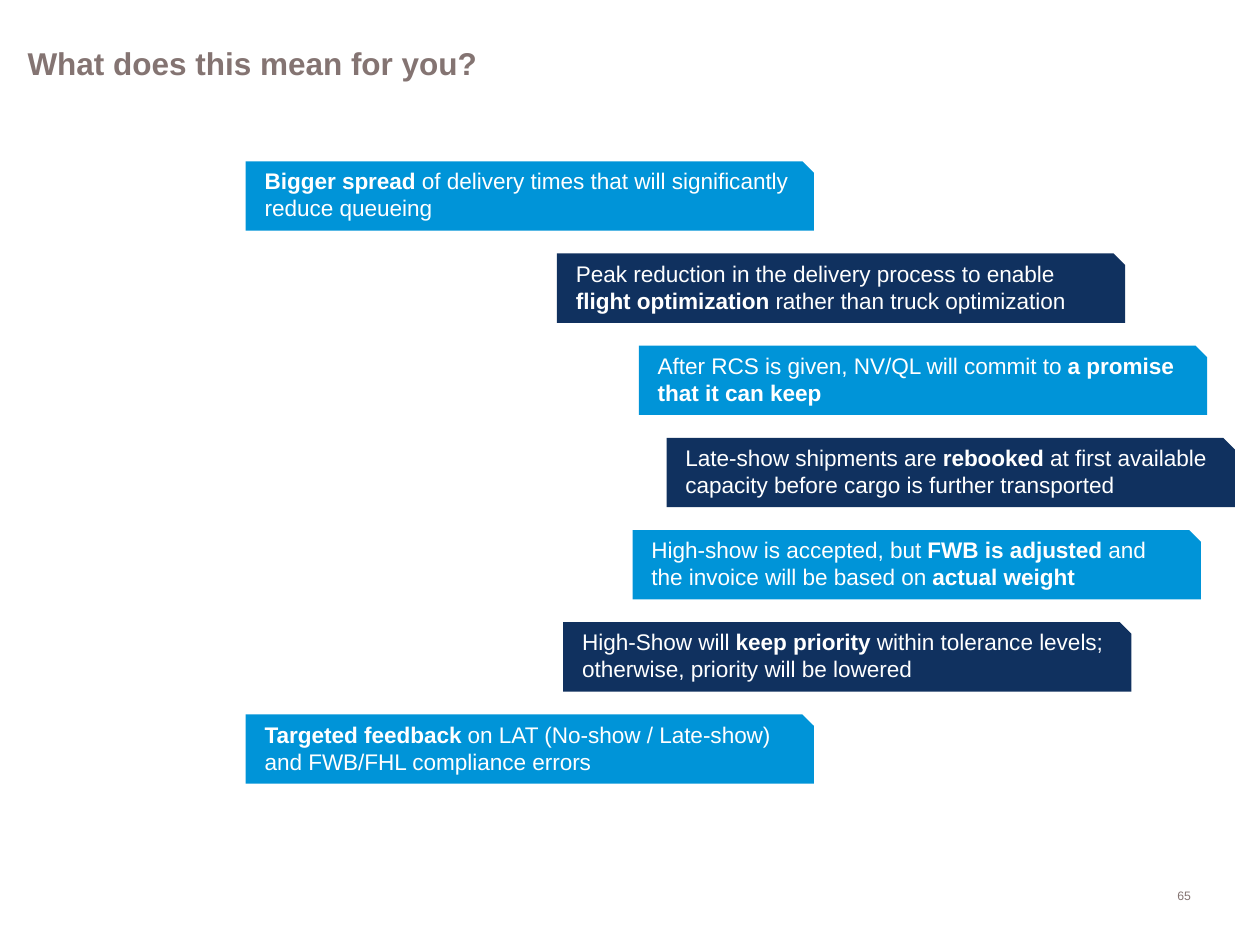
import pptx
import pptx.util
import pptx.dml.color
import pptx.enum.shapes
import pptx.enum.text

COLORS = {"sky": "0094D8", "navy": "10315F", "taupe": "847472", "white": "FFFFFF"}
ALIGN = pptx.enum.text.PP_ALIGN
ANCHOR = pptx.enum.text.MSO_ANCHOR
SIZE = (10, 7.5)
BANNER = (4.51, 0.55)
BANNERS = [
    (0, "*Bigger spread *of delivery times that will significantly reduce queueing"),
    (2.47, "Peak reduction in the delivery process to enable *flight optimization *rather than truck optimization"),
    (3.12, "After RCS is given, NV/QL will commit to *a promise that it can keep"),
    (3.34, "Late-show shipments are *rebooked *at first available capacity before cargo is further transported"),
    (3.07, "High-show is accepted, but *FWB is adjusted* and the invoice will be based on *actual weight"),
    (2.52, "High-Show will *keep priority *within tolerance levels; otherwise, priority will be lowered"),
    (0, "*Targeted feedback *on LAT (No-show / Late-show) and FWB/FHL compliance errors"),
]


def inches(*values):
    return [pptx.util.Inches(v) for v in values]


def rgb(name):
    return pptx.dml.color.RGBColor.from_string(COLORS[name])


def write(sp, text, size, color, frame, para, bold=False):
    tf = sp.text_frame
    for name, value in frame.items():
        setattr(tf, name, value)
    p = tf.paragraphs[0]
    for name, value in para.items():
        setattr(p, name, value)
    for i, part in enumerate(text.split("*")):
        if part:
            r = p.add_run()
            r.text = part
            font = {"name": "Arial", "size": pptx.util.Pt(size), "bold": bold or i % 2 == 1}
            for name, value in font.items():
                setattr(r.font, name, value)
            r.font.color.rgb = rgb(color)


def add_title(s, box):
    sp = s.shapes.add_textbox(*inches(*box))
    write(sp, "What does this mean for you?", 18, "taupe",
          {"word_wrap": True, "vertical_anchor": ANCHOR.MIDDLE},
          {"line_spacing": 0.9}, bold=True)


def add_page_number(s, box):
    sp = s.shapes.add_textbox(*inches(*box))
    write(sp, "65", 7, "taupe", {"word_wrap": True}, {"alignment": ALIGN.RIGHT})


def add_banner(s, box, text, fill):
    sp = s.shapes.add_shape(pptx.enum.shapes.MSO_SHAPE.SNIP_1_RECTANGLE, *inches(*box))
    sp.shadow.inherit = False
    sp.fill.solid()
    sp.fill.fore_color.rgb = rgb(fill)
    sp.line.fill.background()
    left, top, right, bottom = inches(0.15, 0, 0.11, 0.07)
    write(sp, text, 12.9, "white",
          {"word_wrap": True, "vertical_anchor": ANCHOR.MIDDLE, "margin_left": left,
           "margin_top": top, "margin_right": right, "margin_bottom": bottom},
          {"alignment": ALIGN.LEFT})


def add_banner_arc(s, box):
    left, top, width, height = box
    w, h = BANNER
    pitch = (height - h) / (len(BANNERS) - 1)
    for i, (indent, text) in enumerate(BANNERS):
        add_banner(s, (left + indent, top + i * pitch, w, h), text, ("sky", "navy")[i % 2])


def main():
    prs = pptx.Presentation()
    prs.slide_width, prs.slide_height = inches(*SIZE)
    s = prs.slides.add_slide(prs.slide_layouts[6])
    add_page_number(s, (8.74, 7, 0.81, 0.22))
    add_title(s, (0.12, 0.13, 8.62, 0.78))
    add_banner_arc(s, (1.95, 1.28, 7.85, 4.94))
    prs.save("out.pptx")


if __name__ == "__main__":
    main()
